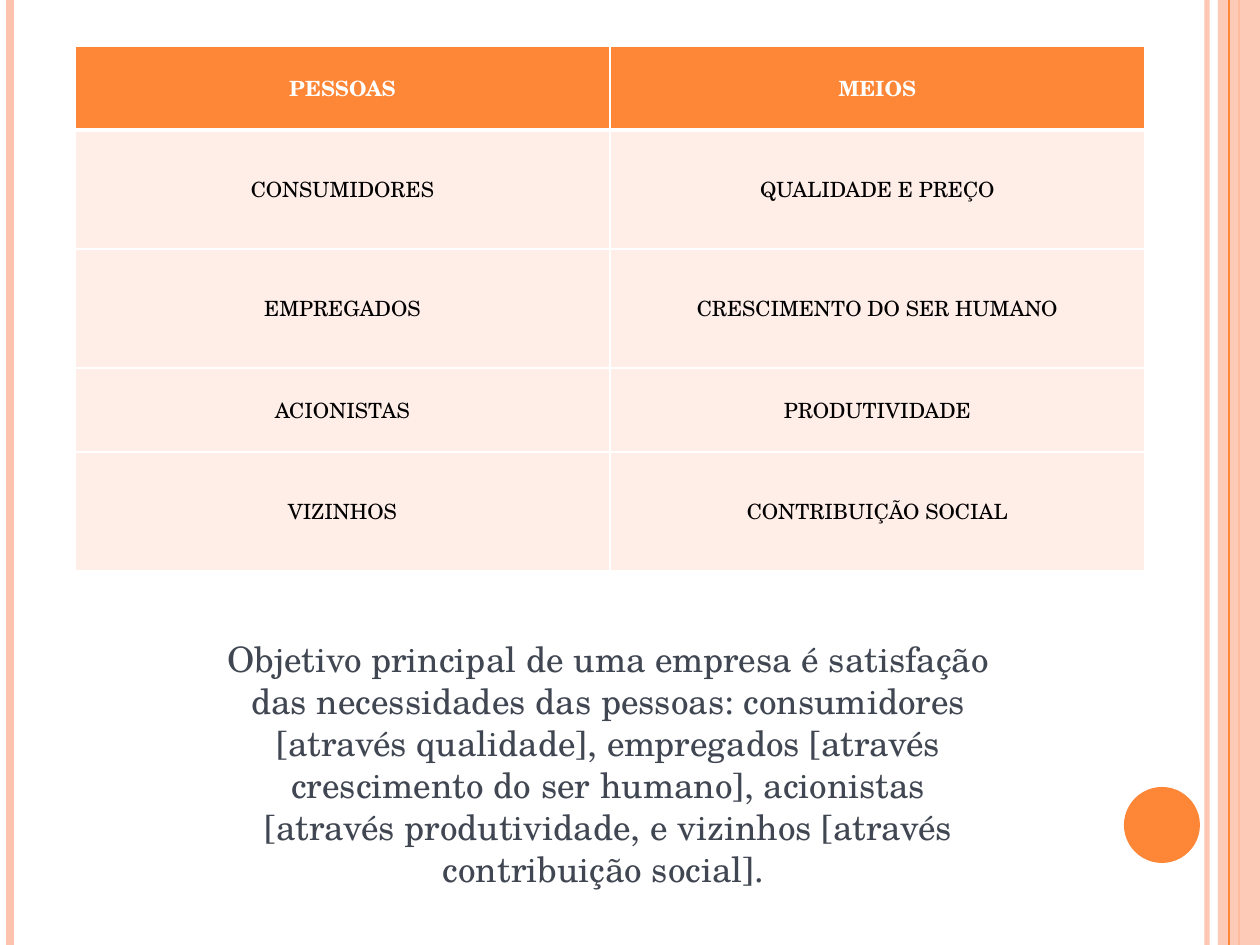
from dataclasses import dataclass

from lxml.etree import SubElement
from pptx import Presentation
from pptx.dml.color import RGBColor
from pptx.enum.shapes import MSO_CONNECTOR as Conn, MSO_SHAPE as Kind
from pptx.enum.text import MSO_ANCHOR as Anchor, MSO_AUTO_SIZE as Fit, PP_ALIGN as Align
from pptx.oxml.ns import qn
from pptx.util import Emu, Pt

WIDE, HIGH = 1260, 945


@dataclass(frozen=True)
class Theme:
    font: str = "TeX Gyre Schola"
    orange: str = "FE8637"
    peach: str = "FEC3AE"
    pale: str = "FFEDE8"
    white: str = "FFFFFF"
    black: str = "000000"
    slate: str = "414752"
    cell: int = 12
    body: int = 20


@dataclass(frozen=True)
class Stripe:
    x: int
    color: str
    width: float
    alpha: int = 100


@dataclass(frozen=True)
class Block:
    kind: Kind
    x: int
    y: int
    w: int
    h: int
    color: str
    alpha: int = 100


@dataclass(frozen=True)
class Row:
    left: str
    right: str
    high: int


THEME = Theme()

# Side decoration, from back to front
DECOR = (
    Stripe(1207, THEME.peach, 3, 93),
    Stripe(10, THEME.peach, 4.5),
    Stripe(1239, THEME.orange, 1.5),
    Block(Kind.RECTANGLE, 1218, 0, 42, HIGH, THEME.peach, 87),
    Stripe(1229, THEME.orange, 0.75),
    Block(Kind.OVAL, 1124, 787, 76, 76, THEME.orange),
)

ROWS = (
    Row("PESSOAS", "MEIOS", 84),
    Row("CONSUMIDORES", "QUALIDADE E PREÇO", 119),
    Row("EMPREGADOS", "CRESCIMENTO DO SER HUMANO", 119),
    Row("ACIONISTAS", "PRODUTIVIDADE", 84),
    Row("VIZINHOS", "CONTRIBUIÇÃO SOCIAL", 119),
)

GOAL = (
    "Objetivo principal de uma empresa é satisfação das necessidades das pessoas: "
    "consumidores [através qualidade], empregados [através crescimento do ser humano], "
    "acionistas [através produtividade, e vizinhos [através contribuição social]. "
)


def px(n: int) -> Emu:
    return Emu(round(n * 914400 / 126))


def rgb(color: str) -> RGBColor:
    return RGBColor.from_string(color)


def fade(props, alpha: int) -> None:
    """Set the opacity, in percent, of the first colour in props."""
    if alpha < 100:
        tone = next(props.iter(qn("a:srgbClr")))
        SubElement(tone, qn("a:alpha"), val=str(alpha * 1000))


def draw_stripe(slide, item: Stripe) -> None:
    x = px(item.x)
    line = slide.shapes.add_connector(Conn.STRAIGHT, x, 0, x, px(HIGH))
    line.line.color.rgb = rgb(item.color)
    line.line.width = Pt(item.width)
    props = line._element.spPr
    fade(props, item.alpha)
    SubElement(props, qn("a:effectLst"))


def draw_block(slide, item: Block) -> None:
    shape = slide.shapes.add_shape(item.kind, px(item.x), px(item.y), px(item.w), px(item.h))
    shape.shadow.inherit = False
    shape.fill.solid()
    shape.fill.fore_color.rgb = rgb(item.color)
    shape.line.fill.background()
    fade(shape._element.spPr, item.alpha)


def style(para, size: int, color: str, bold: bool = False) -> None:
    para.alignment = Align.CENTER
    para.font.name = THEME.font
    para.font.size = Pt(size)
    para.font.bold = bold
    para.font.color.rgb = rgb(color)


def edge(cell, top: float, base: float) -> None:
    """Give a cell white borders, widths in points."""
    props = cell._tc.get_or_add_tcPr()
    sides = (("lnL", 1), ("lnR", 1), ("lnT", top), ("lnB", base))
    for i, (side, width) in enumerate(sides):
        line = props.makeelement(qn(f"a:{side}"), {"w": str(Pt(width))})
        fill = SubElement(line, qn("a:solidFill"))
        SubElement(fill, qn("a:srgbClr"), val=THEME.white)
        props.insert(i, line)


def draw_table(slide, x: int, y: int, wide: int, rows: tuple[Row, ...]) -> None:
    high = sum(row.high for row in rows)
    table = slide.shapes.add_table(len(rows), 2, px(x), px(y), px(2 * wide), px(high)).table
    for col in table.columns:
        col.width = px(wide)
    for r, row in enumerate(rows):
        table.rows[r].height = px(row.high)
        head = r == 0
        for c, text in enumerate((row.left, row.right)):
            cell = table.cell(r, c)
            cell.text = text
            cell.vertical_anchor = Anchor.MIDDLE
            cell.fill.solid()
            cell.fill.fore_color.rgb = rgb(THEME.orange if head else THEME.pale)
            para = cell.text_frame.paragraphs[0]
            style(para, THEME.cell, THEME.white if head else THEME.black, head)
            para.space_before = Pt(THEME.cell * 0.2)
            edge(cell, 3 if r == 1 else 1, 3 if head else 1)


def draw_text(slide, x: int, y: int, w: int, h: int, text: str) -> None:
    frame = slide.shapes.add_textbox(px(x), px(y), px(w), px(h)).text_frame
    frame.word_wrap = True
    frame.auto_size = Fit.SHAPE_TO_FIT_TEXT
    frame.text = text
    style(frame.paragraphs[0], THEME.body, THEME.slate)


def main() -> None:
    deck = Presentation()
    deck.slide_width, deck.slide_height = px(WIDE), px(HIGH)
    slide = deck.slides.add_slide(deck.slide_layouts[6])

    for item in DECOR:
        if isinstance(item, Stripe):
            draw_stripe(slide, item)
        else:
            draw_block(slide, item)

    # People and means, then the closing statement
    draw_table(slide, 75, 46, 535, ROWS)
    draw_text(slide, 213, 631, 791, 267, GOAL)
    deck.save("out.pptx")


if __name__ == "__main__":
    main()
